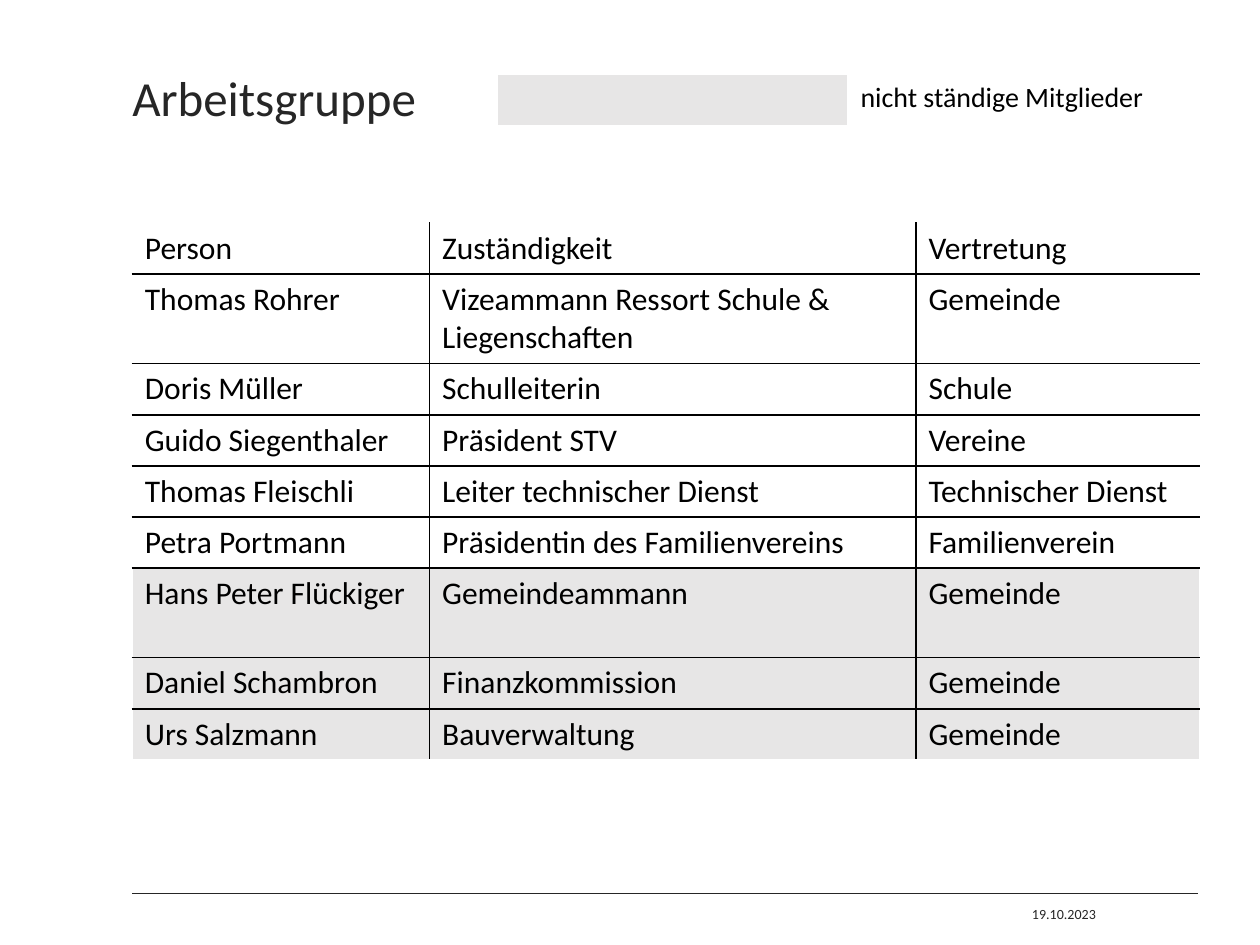
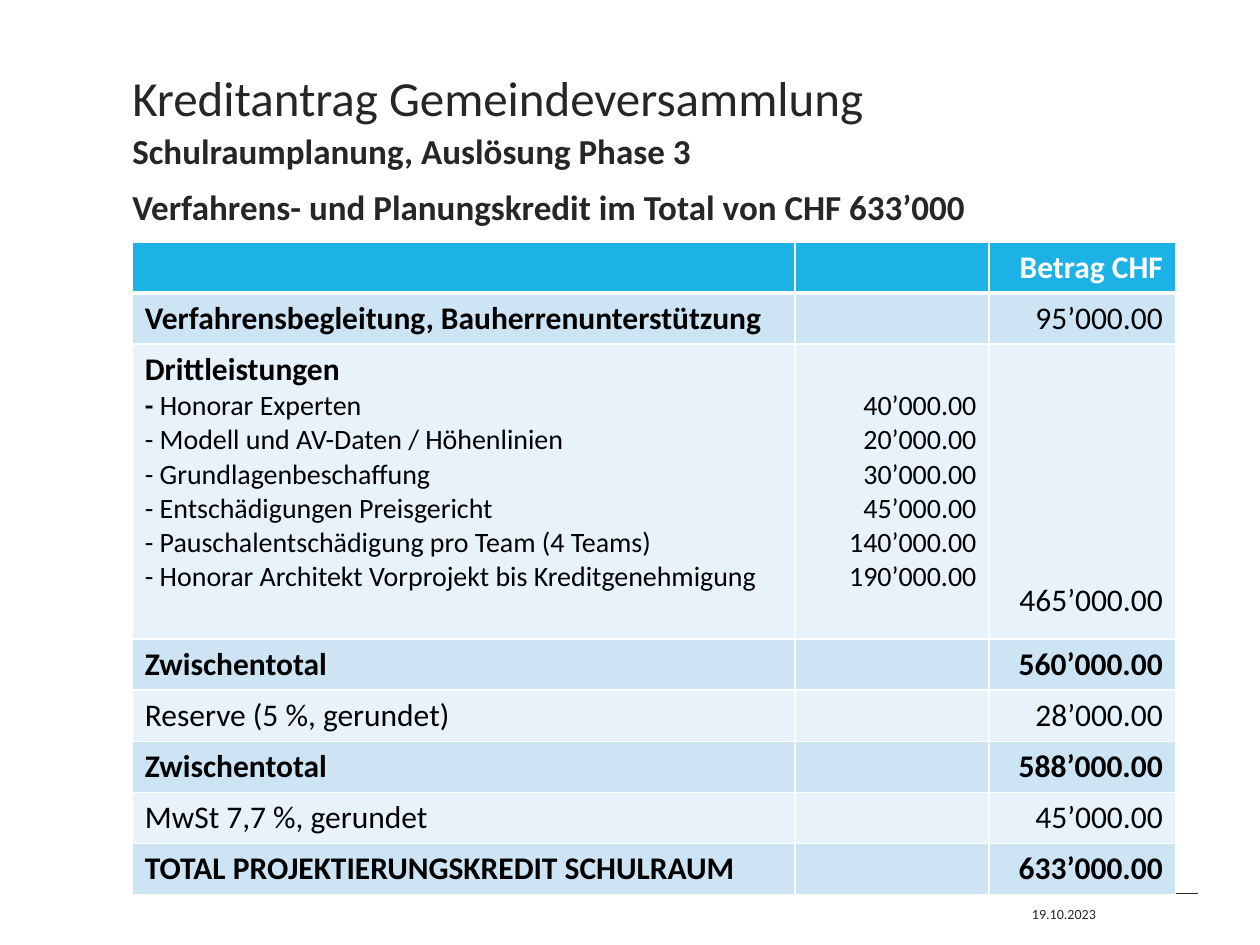
import pptx
import pptx.dml.color
import pptx.enum.shapes
import pptx.enum.text
import pptx.oxml
import pptx.oxml.ns
import pptx.util

COLORS = {
    "ink": "262626", "black": "000000", "white": "FFFFFF", "grey": "E7E6E6",
    "header": "1DB2E6", "band": "CDE4F5", "pale": "E8F2FA",
}
FONT = "Calibri"
COLUMNS, ROWS = 100, 75          # the grid that all lengths are counted in
LEFT, WIDTH = 10.5, 84.6         # content area, in columns
TITLE_TOP = 5.9
LINE_ROW, TALL_ROW = 4.06, 7.1   # table rows for one and for two lines
RIGHT = pptx.enum.text.PP_ALIGN.RIGHT
MIDDLE = pptx.enum.text.MSO_ANCHOR.MIDDLE
BOTTOM = pptx.enum.text.MSO_ANCHOR.BOTTOM


def rgb(color):
    return pptx.dml.color.RGBColor.from_string(COLORS[color])


def write(frame, lines, size=18, color="black", bold=False, align=None,
          spacing=None, before=0):
    """Append paragraphs; a line is a string or a list of (text, bold) runs."""
    for line in lines:
        started = bool(frame.text)
        paragraph = frame.add_paragraph() if started else frame.paragraphs[0]
        paragraph.alignment = align
        if spacing:
            paragraph.line_spacing = spacing
        if started and before:
            paragraph.space_before = pptx.util.Pt(before)
        for words, is_bold in [(line, bold)] if isinstance(line, str) else line:
            run = paragraph.add_run()
            run.text = words
            run.font.name = FONT
            run.font.size = pptx.util.Pt(size)
            run.font.bold = is_bold
            run.font.color.rgb = rgb(color)


def set_borders(cell, edges):
    """Draw the cell's edges, given as {side: (color, points)}."""
    properties = cell._tc.get_or_add_tcPr()
    for place, side in enumerate("LRTB"):
        color, points = edges[side]
        properties.insert(place, pptx.oxml.parse_xml(
            f'<a:ln{side} {pptx.oxml.ns.nsdecls("a")} w="{pptx.util.Pt(points)}">'
            f'<a:solidFill><a:srgbClr val="{COLORS[color]}"/></a:solidFill>'
            f'</a:ln{side}>'))


class Deck:
    def __init__(self):
        self.presentation = pptx.Presentation()
        self.presentation.slide_width = pptx.util.Inches(10)
        self.presentation.slide_height = pptx.util.Inches(7.5)
        self.slide = None

    def x(self, columns):
        return round(self.presentation.slide_width * columns / COLUMNS)

    def y(self, rows):
        return round(self.presentation.slide_height * rows / ROWS)

    def start_slide(self, title):
        blank = self.presentation.slide_layouts[6]
        self.slide = self.presentation.slides.add_slide(blank)
        self.rule(70.9)
        self.text(81.9, 71.5, 6.2, 2, ["19.10.2023"], anchor=MIDDLE, size=8)
        self.text(LEFT, TITLE_TOP, WIDTH, 4.3, [title], top_inset=0,
                  size=28, spacing=0.9)

    def rule(self, top):
        rule = self.slide.shapes.add_connector(
            pptx.enum.shapes.MSO_CONNECTOR.STRAIGHT,
            self.x(LEFT), self.y(top), self.x(LEFT + WIDTH), self.y(top))
        rule.line.color.rgb = rgb("ink")
        rule.line.width = pptx.util.Pt(0.5)
        rule._element.spPr.append(pptx.oxml.parse_xml(
            f'<a:effectLst {pptx.oxml.ns.nsdecls("a")}/>'))

    def text(self, left, top, width, height, lines, anchor=None,
             top_inset=0.5, **style):
        frame = self.slide.shapes.add_textbox(
            self.x(left), self.y(top), self.x(width), self.y(height)).text_frame
        frame.word_wrap = True
        frame.margin_left = 0
        frame.margin_top = self.y(top_inset)
        frame.vertical_anchor = anchor
        write(frame, lines, **{"color": "ink", **style})

    def table(self, left, top, widths, heights, fill_at, inner="white", header_rule=1):
        """Add an empty table; fill_at(row, column) names a fill or is None."""
        grid = self.slide.shapes.add_table(
            len(heights), len(widths), self.x(left), self.y(top),
            self.x(sum(widths)), self.y(sum(heights))).table
        grid.first_row = grid.horz_banding = False
        for column, width in zip(grid.columns, widths):
            column.width = self.x(width)
        for row, height in zip(grid.rows, heights):
            row.height = self.y(height)
        last_row, last_column = len(heights) - 1, len(widths) - 1
        for r in range(len(heights)):
            for c in range(len(widths)):
                cell = grid.cell(r, c)
                fill = fill_at(r, c)
                if fill:
                    cell.fill.solid()
                    cell.fill.fore_color.rgb = rgb(fill)
                else:
                    cell.fill.background()
                set_borders(cell, {
                    "L": (inner if c else "white", 1),
                    "R": (inner if c < last_column else "white", 1),
                    "T": (inner if r else "white", header_rule if r == 1 else 1),
                    "B": (inner if r < last_row else "white", 1 if r else header_rule),
                })
        return grid


def add_working_group(deck):
    members = [
        ("Person", "Zuständigkeit", "Vertretung"),
        ("Thomas Rohrer", "Vizeammann Ressort Schule & Liegenschaften", "Gemeinde"),
        ("Doris Müller", "Schulleiterin", "Schule"),
        ("Guido Siegenthaler", "Präsident STV", "Vereine"),
        ("Thomas Fleischli", "Leiter technischer Dienst", "Technischer Dienst"),
        ("Petra Portmann", "Präsidentin des Familienvereins", "Familienverein"),
        ("Hans Peter Flückiger", "Gemeindeammann", "Gemeinde"),
        ("Daniel Schambron", "Finanzkommission", "Gemeinde"),
        ("Urs Salzmann", "Bauverwaltung", "Gemeinde"),
    ]
    first_guest = 6
    heights = [TALL_ROW if r in (1, first_guest) else LINE_ROW
               for r in range(len(members))]

    deck.start_slide("Arbeitsgruppe")
    group = deck.table(LEFT, 17.7, [23.6, 38.6, 22.5], heights,
                       lambda r, c: "grey" if r >= first_guest else None,
                       inner="black")
    for r, member in enumerate(members):
        for c, entry in enumerate(member):
            write(group.cell(r, c).text_frame, [entry])

    legend = deck.table(39.5, TITLE_TOP, [27.8, 27.8], [LINE_ROW],
                        lambda r, c: "white" if c else "grey")
    write(legend.cell(0, 1).text_frame, ["nicht ständige Mitglieder"], size=16)


def add_credit_request(deck):
    # label, amount, label bold, amount bold
    budget = [
        ("Verfahrensbegleitung, Bauherrenunterstützung", "95’000.00", True, False),
        ("Drittleistungen", "465’000.00", True, False),
        ("Zwischentotal", "560’000.00", True, True),
        ("Reserve (5 %, gerundet)", "28’000.00", False, False),
        ("Zwischentotal", "588’000.00", True, True),
        ("MwSt 7,7 %, gerundet", "45’000.00", False, False),
        ("TOTAL PROJEKTIERUNGSKREDIT SCHULRAUM", "633’000.00", True, True),
    ]
    services = [
        ([("- ", True), ("Honorar Experten", False)], "40’000.00"),
        ("- Modell und AV-Daten / Höhenlinien", "20’000.00"),
        ("- Grundlagenbeschaffung", "30’000.00"),
        ("- Entschädigungen Preisgericht", "45’000.00"),
        ("- Pauschalentschädigung pro Team (4 Teams)", "140’000.00"),
        ("- Honorar Architekt Vorprojekt bis Kreditgenehmigung", "190’000.00"),
    ]
    service_row = 2
    heights = [23.4 if r == service_row else LINE_ROW
               for r in range(len(budget) + 1)]

    def fill_at(r, c):
        if r == 0:
            return "header"
        return "band" if r % 2 else "pale"

    deck.start_slide("Kreditantrag Gemeindeversammlung")
    deck.text(LEFT, 10.2, WIDTH, 58.7,
              ["Schulraumplanung, Auslösung Phase 3",
               "Verfahrens- und Planungskredit im Total von CHF 633’000"],
              size=20, bold=True, spacing=0.9, before=10)
    costs = deck.table(LEFT, 19.2, [52.6, 15.4, 14.8], heights, fill_at,
                       header_rule=3)
    write(costs.cell(0, 2).text_frame, ["Betrag CHF"], color="white",
          bold=True, align=RIGHT)
    for r, (label, amount, label_bold, amount_bold) in enumerate(budget, 1):
        write(costs.cell(r, 0).text_frame, [label], bold=label_bold)
        write(costs.cell(r, 2).text_frame, [amount], bold=amount_bold, align=RIGHT)

    names, prices = zip(*services)
    write(costs.cell(service_row, 0).text_frame, names, size=16)
    price_cell = costs.cell(service_row, 1)
    price_cell.margin_top = deck.y(3.55)
    write(price_cell.text_frame, prices, size=16, align=RIGHT)
    sum_cell = costs.cell(service_row, 2)
    sum_cell.vertical_anchor = BOTTOM
    sum_cell.margin_bottom = deck.y(1.5)


def main():
    deck = Deck()
    add_working_group(deck)
    add_credit_request(deck)
    deck.presentation.save("out.pptx")


if __name__ == "__main__":
    main()
